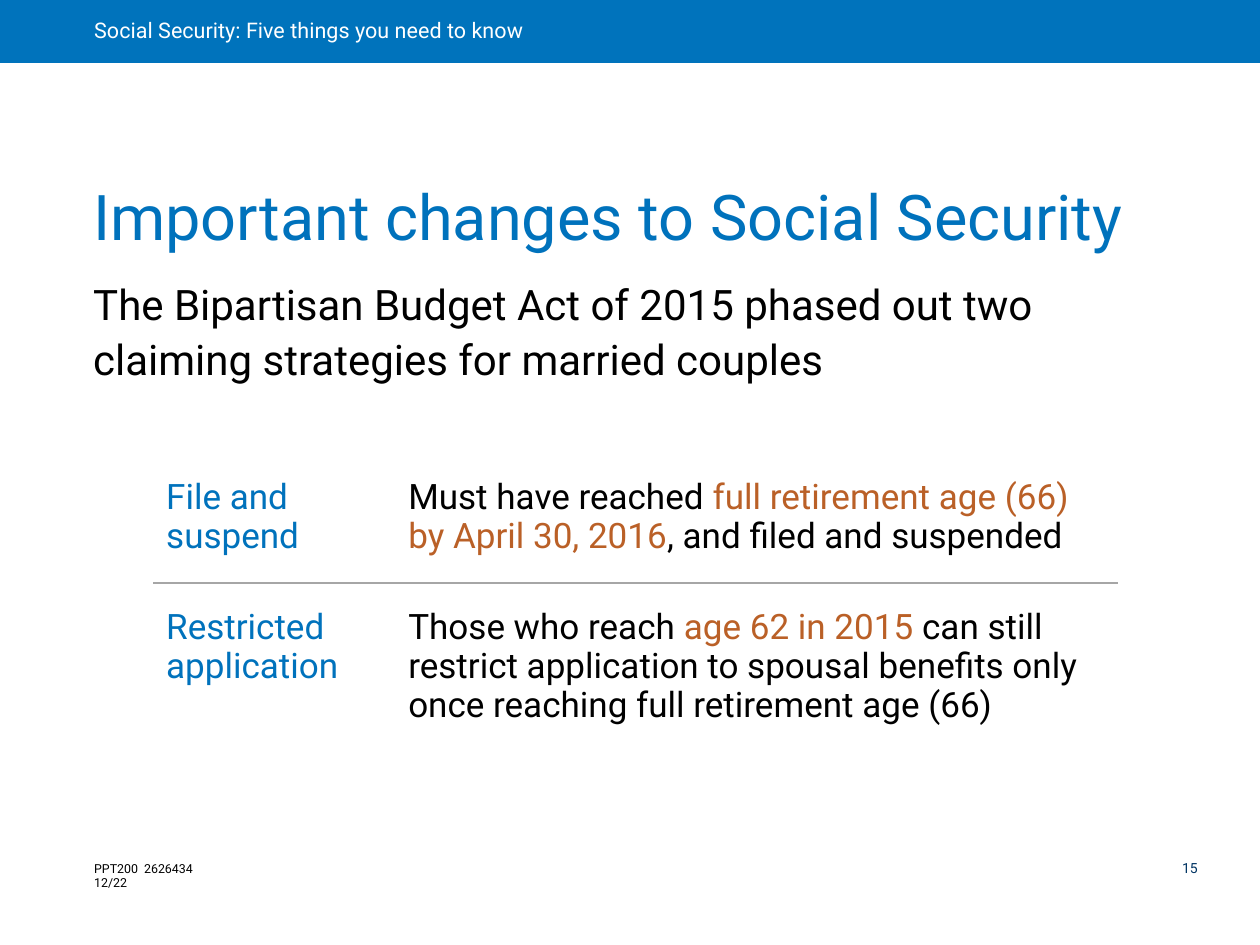
from lxml import etree
from pptx import Presentation
from pptx.dml.color import RGBColor
from pptx.enum.shapes import MSO_SHAPE
from pptx.enum.text import MSO_ANCHOR as Anchor
from pptx.oxml.ns import qn
from pptx.util import Cm, Pt

FONT = "Roboto"
BLUE, BLACK, RUST = "0072BC", "000000", "BA6027"
ROWS = [
    ("File and\nsuspend",
     [("Must have reached ", BLACK),
      ("full retirement age (66)\nby April 30, 2016", RUST),
      (", and filed and suspended", BLACK)]),
    ("Restricted\napplication",
     [("Those who reach ", BLACK),
      ("age 62 in 2015 ", RUST),
      ("can still\nrestrict application to spousal benefits only\n"
       "once reaching full retirement age (66)", BLACK)]),
]


def rgb(value):
    return RGBColor.from_string(value)


def write(tf, runs, size, spacing=0.9):
    """Fill the first paragraph with (text, colour) runs; newlines become line breaks."""
    p = tf.paragraphs[0]
    p.line_spacing = spacing
    p.font.name = FONT
    p.font.size = Pt(size)
    for text, color in runs:
        for i, line in enumerate(text.split("\n")):
            if i:
                p.add_line_break()
            r = p.add_run()
            r.text = line
            r.font.name = FONT
            r.font.size = Pt(size)
            r.font.color.rgb = rgb(color)


def set_margins(target, left, top, right, bottom):
    target.margin_left, target.margin_top = Cm(left), Cm(top)
    target.margin_right, target.margin_bottom = Cm(right), Cm(bottom)


def add_text(s, box, text, size, color, margins, spacing=0.9, anchor=Anchor.TOP, wrap=True):
    tf = s.shapes.add_textbox(*map(Cm, box)).text_frame
    tf.word_wrap = wrap
    tf.vertical_anchor = anchor
    set_margins(tf, *margins)
    write(tf, [(text, color)], size, spacing)


def add_banner(s, text):
    sp = s.shapes.add_shape(MSO_SHAPE.RECTANGLE, 0, 0, Cm(25.4), Cm(1.27))
    sp.shadow.inherit = False
    sp.fill.solid()
    sp.fill.fore_color.rgb = rgb("0073BC")
    sp.line.fill.background()
    tf = sp.text_frame
    tf.vertical_anchor = Anchor.MIDDLE
    set_margins(tf, 1.9, 0, 0.56, 0)
    write(tf, [(text, "FFFFFF")], 12.3)
    tf.paragraphs[0].alignment = 1


def add_border(cell, side):
    ln = etree.Element(qn(f"a:{side}"), w=str(Pt(1.5)))
    fill = etree.SubElement(ln, qn("a:solidFill"))
    etree.SubElement(fill, qn("a:srgbClr"), val="A6A6A6")
    cell._tc.get_or_add_tcPr().insert(0, ln)


def add_strategy_table(s):
    table = s.shapes.add_table(len(ROWS), 2, Cm(3.1), Cm(9.12), Cm(19.43), Cm(6.04)).table
    table.first_row = table.horz_banding = False
    for col, width in zip(table.columns, (4.88, 14.55)):
        col.width = Cm(width)
    for row, height in zip(table.rows, (2.61, 3.43)):
        row.height = Cm(height)
    for i, (label, rule) in enumerate(ROWS):
        for j, runs in enumerate(([(label, BLUE)], rule)):
            cell = table.cell(i, j)
            cell.fill.background()
            set_margins(cell, 0.25, 0.51, 0.25, 0.51)
            write(cell.text_frame, runs, 20, 0.95)
            add_border(cell, "lnT" if i else "lnB")


def main():
    prs = Presentation()
    prs.slide_width, prs.slide_height = Cm(25.4), Cm(19.05)
    s = prs.slides.add_slide(prs.slide_layouts[6])
    body_margins = (0.28, 0.15, 0.28, 0.15)

    add_text(s, (1.65, 17.22, 2.95, 0.86), "PPT200  2626434\n12/22", 7.1, BLACK,
             (0.25, 0.13, 0.25, 0.13), spacing=1.0, wrap=False)
    add_banner(s, "Social Security: Five things you need to know")
    add_text(s, (23.5, 17.27, 1.27, 0.53), "15", 8, "003463", (0.33, 0.1, 0.1, 0.1))
    add_text(s, (1.6, 4.52, 21.9, 0.76), "Important changes to Social Security", 36, BLUE,
             body_margins, anchor=Anchor.BOTTOM)
    add_text(s, (1.6, 5.36, 21.9, 2.54),
             "The Bipartisan Budget Act of 2015 phased out two "
             "claiming strategies for married couples", 24, BLACK, body_margins, spacing=1.1)
    add_strategy_table(s)
    prs.save("out.pptx")


if __name__ == "__main__":
    main()
